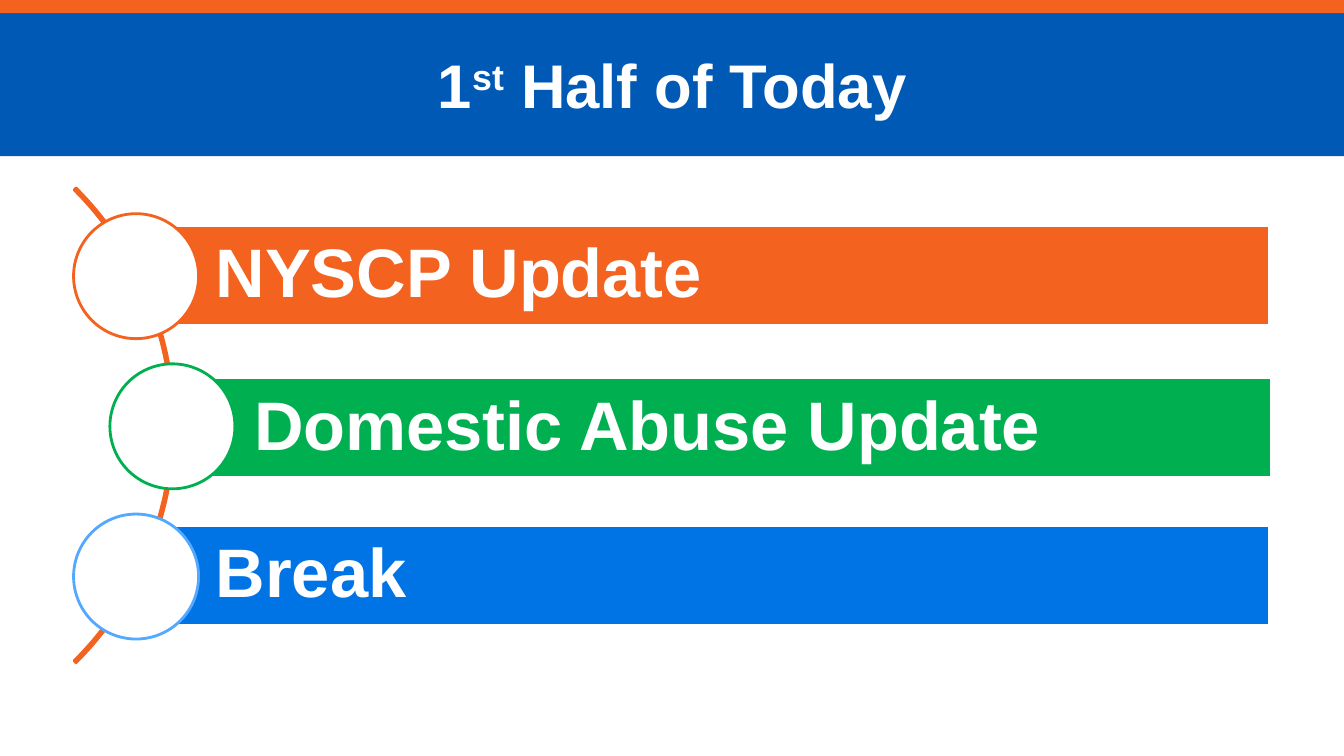
"""Build the agenda slide for the first half of the day."""
from dataclasses import dataclass

import pptx
import pptx.dml.color
import pptx.enum.shapes
import pptx.enum.text
import pptx.util

Inches = pptx.util.Inches
Pt = pptx.util.Pt
RGBColor = pptx.dml.color.RGBColor
Kind = pptx.enum.shapes.MSO_SHAPE
Anchor = pptx.enum.text.MSO_ANCHOR
Align = pptx.enum.text.PP_ALIGN

WHITE = RGBColor(0xFF, 0xFF, 0xFF)
NAVY = RGBColor(0x00, 0x59, 0xB5)
ORANGE = RGBColor(0xF3, 0x62, 0x1E)
GREEN = RGBColor(0x00, 0xB0, 0x50)
BLUE = RGBColor(0x00, 0x73, 0xE5)
SKY = RGBColor(0x53, 0xA9, 0xFF)

DOT_TOP, DOT_STEP, DOT_SIZE = 2.12, 1.49, 1.24


@dataclass
class Topic:
    text: str
    left: float
    top: float
    width: float
    dot_left: float
    fill: RGBColor
    ring: RGBColor


TOPICS = [
    Topic("NYSCP Update", 1.35, 2.24, 11.24, 0.73, ORANGE, ORANGE),
    Topic("Domestic Abuse Update", 1.73, 3.75, 10.88, 1.09, GREEN, GREEN),
    Topic("Break", 1.35, 5.21, 11.24, 0.73, BLUE, SKY),
]


def add_shape(slide, kind, left: float, top: float, width: float, height: float,
              fill: RGBColor | None, line: RGBColor | None = None):
    shape = slide.shapes.add_shape(
        kind, Inches(left), Inches(top), Inches(width), Inches(height))
    shape.shadow.inherit = False
    if fill is None:
        shape.fill.background()
    else:
        shape.fill.solid()
        shape.fill.fore_color.rgb = fill
    if line is None:
        shape.line.fill.background()
    else:
        shape.line.color.rgb = line
        shape.line.width = Pt(2)
    return shape


def add_run(para, text: str, size: float):
    run = para.add_run()
    run.text = text
    run.font.name = "Arial"
    run.font.size = Pt(size)
    run.font.bold = True
    run.font.color.rgb = WHITE
    return run


def add_title(slide) -> None:
    title = slide.shapes.title
    slide.shapes._spTree.append(title._element)
    title.left, title.top = Inches(0.67), Inches(0.21)
    title.width, title.height = Inches(12), Inches(1.25)
    frame = title.text_frame
    frame.auto_size = pptx.enum.text.MSO_AUTO_SIZE.NONE
    frame.vertical_anchor = Anchor.MIDDLE
    para = frame.paragraphs[0]
    para.alignment = Align.CENTER
    add_run(para, "1", 44)
    raised = add_run(para, "st", 44)
    raised._r.get_or_add_rPr().set("baseline", "30000")
    add_run(para, " Half of Today", 44)


def add_topic(slide, topic: Topic, dot_top: float) -> None:
    bar = add_shape(slide, Kind.RECTANGLE, topic.left, topic.top,
                    topic.width, 0.99, topic.fill, WHITE)
    frame = bar.text_frame
    frame.word_wrap = True
    frame.vertical_anchor = Anchor.MIDDLE
    frame.margin_left = Inches(0.79)
    frame.margin_top = frame.margin_right = frame.margin_bottom = Inches(0.14)
    para = frame.paragraphs[0]
    para.alignment = Align.LEFT
    para.line_spacing = 0.9
    add_run(para, topic.text, 49)
    add_shape(slide, Kind.OVAL, topic.dot_left, dot_top,
              DOT_SIZE, DOT_SIZE, WHITE, topic.ring)


def main() -> None:
    deck = pptx.Presentation()
    deck.slide_width, deck.slide_height = Inches(13.33), Inches(7.5)
    slide = deck.slides.add_slide(deck.slide_layouts.get_by_name("Title Only"))
    add_shape(slide, Kind.RECTANGLE, 0, 0, 13.33, 1.55, NAVY)
    add_shape(slide, Kind.RECTANGLE, 0, 0, 13.33, 0.13, ORANGE)
    add_title(slide)
    arc = add_shape(slide, Kind.BLOCK_ARC, -4.93, 0.89, 6.66, 6.66, None, ORANGE)
    for i, value in enumerate((189, 27, 0.004)):
        arc.adjustments[i] = value
    for i, topic in enumerate(TOPICS):
        add_topic(slide, topic, DOT_TOP + i * DOT_STEP)
    deck.save("out.pptx")


if __name__ == "__main__":
    main()
